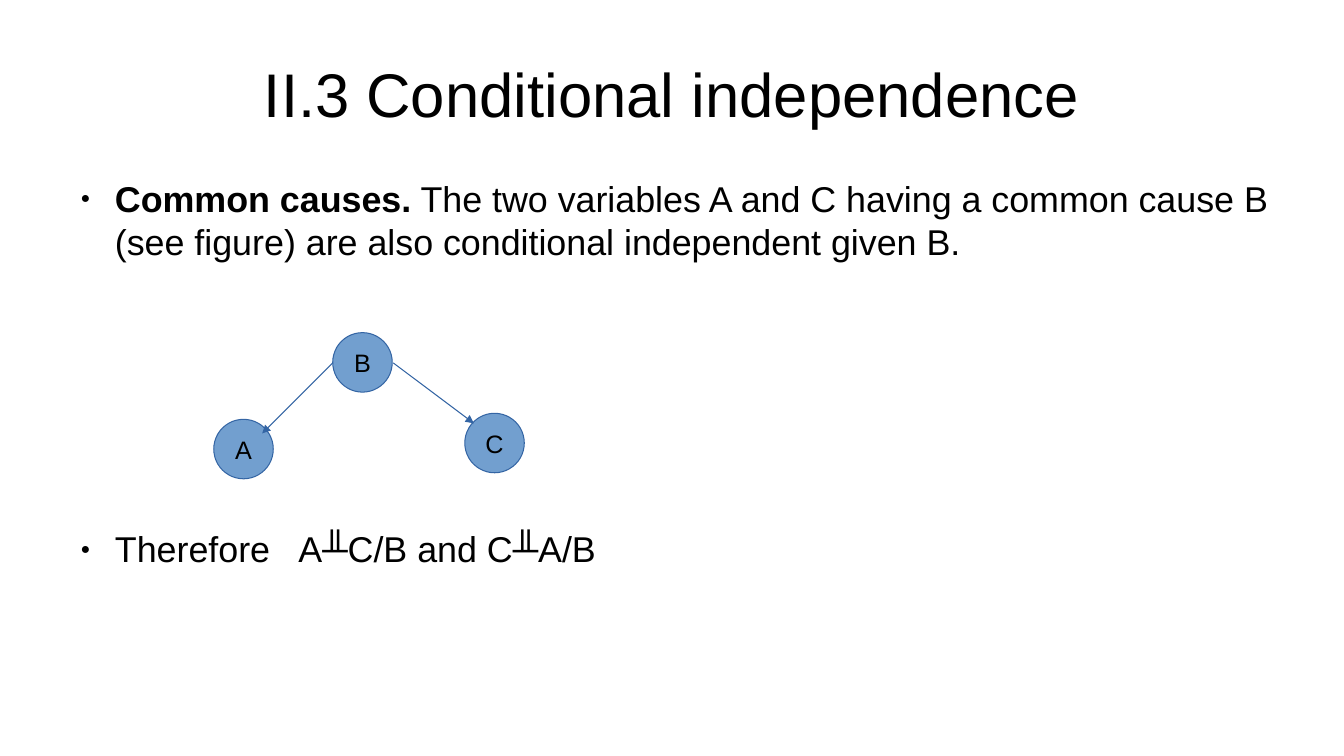
from dataclasses import dataclass

from lxml import etree
from pptx import Presentation
from pptx.dml.color import RGBColor
from pptx.enum.shapes import MSO_CONNECTOR, MSO_SHAPE
from pptx.enum.text import MSO_ANCHOR, MSO_AUTO_SIZE, PP_ALIGN
from pptx.oxml.ns import qn
from pptx.util import Pt

PX = 9144
OVAL = MSO_SHAPE.OVAL
STRAIGHT = MSO_CONNECTOR.STRAIGHT
TOP = MSO_ANCHOR.TOP
MIDDLE = MSO_ANCHOR.MIDDLE
CENTER = PP_ALIGN.CENTER
FIXED = MSO_AUTO_SIZE.NONE


@dataclass(frozen=True)
class Theme:
    """Hold the colours, font and type sizes."""
    font: str = "Arial"
    ink: str = "000000"
    fill: str = "729FCF"
    edge: str = "3465A4"
    title: float = 44
    body: float = 25.6
    node: float = 18
    line: float = 0.75


THEME = Theme()
NODE = 59
NODES = [("A", 212, 416), ("B", 330, 330), ("C", 461, 410)]
ARROWS = [(330, 360, 260, 430), (390, 360, 470, 420)]
POINTS = [
    (0, [("Common causes.", True),
         (" The two variables A and C having a common cause B "
          "(see figure) are also conditional independent given B.", False)]),
    (189, [("Therefore\tA╨C/B and C╨A/B", False)]),
]


def color(code):
    """Turn a hex code into a colour."""
    return RGBColor.from_string(code)


def add_run(para, text, size, bold=False):
    """Add one formatted run of text."""
    run = para.add_run()
    run.text = text
    run.font.name = THEME.font
    run.font.size = Pt(size)
    run.font.bold = bold
    run.font.color.rgb = color(THEME.ink)


def set_frame(holder, box, anchor):
    """Place a placeholder and clear its margins."""
    holder.left, holder.top, holder.width, holder.height = (n * PX for n in box)
    frame = holder.text_frame
    frame.margin_left = frame.margin_right = 0
    frame.margin_top = frame.margin_bottom = 0
    frame.vertical_anchor = anchor
    frame.auto_size = FIXED
    frame.word_wrap = True
    return frame


def add_bullet(para, stop):
    """Give a paragraph a hanging dot and a tab stop."""
    props = para._p.get_or_add_pPr()
    props.set("marL", str(47 * PX))
    props.set("indent", str(-34 * PX))
    tint = etree.SubElement(props, qn("a:buClr"))
    etree.SubElement(tint, qn("a:srgbClr"), val=THEME.ink)
    etree.SubElement(props, qn("a:buSzPct"), val="45000")
    etree.SubElement(props, qn("a:buFont"), typeface=THEME.font)
    etree.SubElement(props, qn("a:buChar"), char="●")
    tabs = etree.SubElement(props, qn("a:tabLst"))
    etree.SubElement(tabs, qn("a:tab"), pos=str(stop * PX), algn="l")


def add_title(slide, text):
    """Fill the title placeholder."""
    frame = set_frame(slide.shapes.title, (67, 30, 1199, 124), MIDDLE)
    para = frame.paragraphs[0]
    para.alignment = CENTER
    add_run(para, text, THEME.title)


def add_list(slide, points):
    """Fill the body placeholder with bullets."""
    frame = set_frame(slide.placeholders[1], (67, 175, 1199, 434), TOP)
    for i, (gap, runs) in enumerate(points):
        para = frame.add_paragraph() if i else frame.paragraphs[0]
        add_bullet(para, 229)
        para.space_before = Pt(gap)
        for text, bold in runs:
            add_run(para, text, THEME.body, bold)


def add_node(slide, name, left, top):
    """Draw one named graph node."""
    node = slide.shapes.add_shape(OVAL, left * PX, top * PX, NODE * PX, NODE * PX)
    node.shadow.inherit = False
    node.fill.solid()
    node.fill.fore_color.rgb = color(THEME.fill)
    node.line.color.rgb = color(THEME.edge)
    node.line.width = Pt(THEME.line)
    frame = node.text_frame
    frame.word_wrap = False
    frame.vertical_anchor = MIDDLE
    para = frame.paragraphs[0]
    para.alignment = CENTER
    add_run(para, name, THEME.node)


def add_arrow(slide, ends):
    """Draw a straight arrow between two points."""
    arrow = slide.shapes.add_connector(STRAIGHT, *(n * PX for n in ends))
    arrow.line.color.rgb = color(THEME.edge)
    arrow.line.width = Pt(THEME.line)
    etree.SubElement(arrow.line._get_or_add_ln(), qn("a:tailEnd"), type="triangle")
    etree.SubElement(arrow._element.spPr, qn("a:effectLst"))


def main():
    """Build and save the slide."""
    deck = Presentation()
    deck.slide_width, deck.slide_height = 1333 * PX, 750 * PX
    slide = deck.slides.add_slide(deck.slide_layouts[1])
    add_title(slide, "II.3 Conditional independence")
    add_list(slide, POINTS)
    for node in NODES:
        add_node(slide, *node)
    for ends in ARROWS:
        add_arrow(slide, ends)
    deck.save("out.pptx")


if __name__ == "__main__":
    main()
